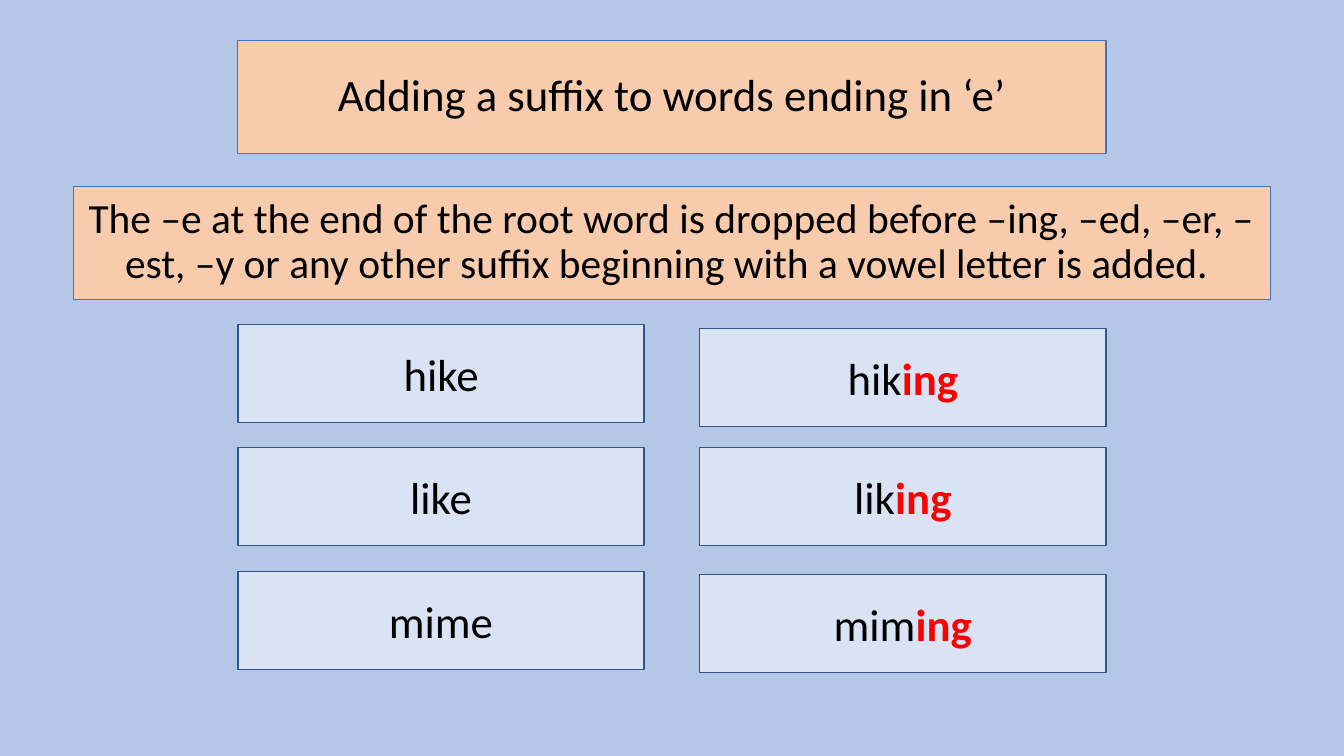
from pptx import Presentation
from pptx.dml.color import RGBColor
from pptx.enum.shapes import MSO_SHAPE
from pptx.enum.text import MSO_ANCHOR, PP_ALIGN
from pptx.util import Inches, Pt

RECTANGLE = MSO_SHAPE.RECTANGLE
MIDDLE = MSO_ANCHOR.MIDDLE
CENTER = PP_ALIGN.CENTER

THEME = {
    "background": "B4C7E7",
    "font": "Calibri",
    "text": "000000",
    "suffix": "FF0000",
    "banner": {"fill": "F8CBAD", "line": "4472C4", "weight": 0.75, "spacing": 0.9},
    "card": {"fill": "DAE3F3", "line": "325491", "weight": 1, "spacing": 1.0},
    "heading_size": 32,
    "rule_size": 29.6,
    "word_size": 32,
}

SLIDE_WIDTH, SLIDE_HEIGHT = 13.33, 7.5
BANNER_HEIGHT = 1.12
CARD_WIDTH, CARD_HEIGHT = 4.03, 0.97
ROOT_LEFT, SUFFIXED_LEFT = 2.36, 6.94


def add_box(left, top, width, height, style, size, stem, suffix=""):
    """Add a centred text box; the suffix is bold and highlighted."""
    box = slide.shapes.add_shape(
        RECTANGLE, Inches(left), Inches(top), Inches(width), Inches(height))
    box.shadow.inherit = False
    box.fill.solid()
    box.fill.fore_color.rgb = RGBColor.from_string(style["fill"])
    box.line.color.rgb = RGBColor.from_string(style["line"])
    box.line.width = Pt(style["weight"])
    frame = box.text_frame
    frame.word_wrap = True
    frame.vertical_anchor = MIDDLE
    para = frame.paragraphs[0]
    para.alignment = CENTER
    para.line_spacing = style["spacing"]
    for text, color, bold in ((stem, THEME["text"], False),
                              (suffix, THEME["suffix"], True)):
        if text:
            span = para.add_run()
            span.text = text
            font_format = {"name": THEME["font"], "size": Pt(size), "bold": bold}
            for name, value in font_format.items():
                setattr(span.font, name, value)
            span.font.color.rgb = RGBColor.from_string(color)


deck = Presentation()
deck.slide_width = Inches(SLIDE_WIDTH)
deck.slide_height = Inches(SLIDE_HEIGHT)
slide = deck.slides.add_slide(deck.slide_layouts[6])
slide.background.fill.solid()
slide.background.fill.fore_color.rgb = RGBColor.from_string(THEME["background"])

banners = [
    (0.4, 8.61, THEME["heading_size"], "Adding a suffix to words ending in ‘e’"),
    (1.85, 11.88, THEME["rule_size"],
     "The –e at the end of the root word is dropped before –ing, –ed, –er, –est, "
     "–y or any other suffix beginning with a vowel letter is added. "),
]
for top, width, size, text in banners:
    add_box((SLIDE_WIDTH - width) / 2, top, width, BANNER_HEIGHT,
            THEME["banner"], size, text)

# Each row: stem, top of the root word card, top of the suffixed word card
word_rows = [("hik", 3.22, 3.26), ("lik", 4.44, 4.44), ("mim", 5.67, 5.7)]
for stem, root_top, suffixed_top in word_rows:
    add_box(ROOT_LEFT, root_top, CARD_WIDTH, CARD_HEIGHT,
            THEME["card"], THEME["word_size"], stem + "e")
    add_box(SUFFIXED_LEFT, suffixed_top, CARD_WIDTH, CARD_HEIGHT,
            THEME["card"], THEME["word_size"], stem, "ing")

deck.save("out.pptx")
